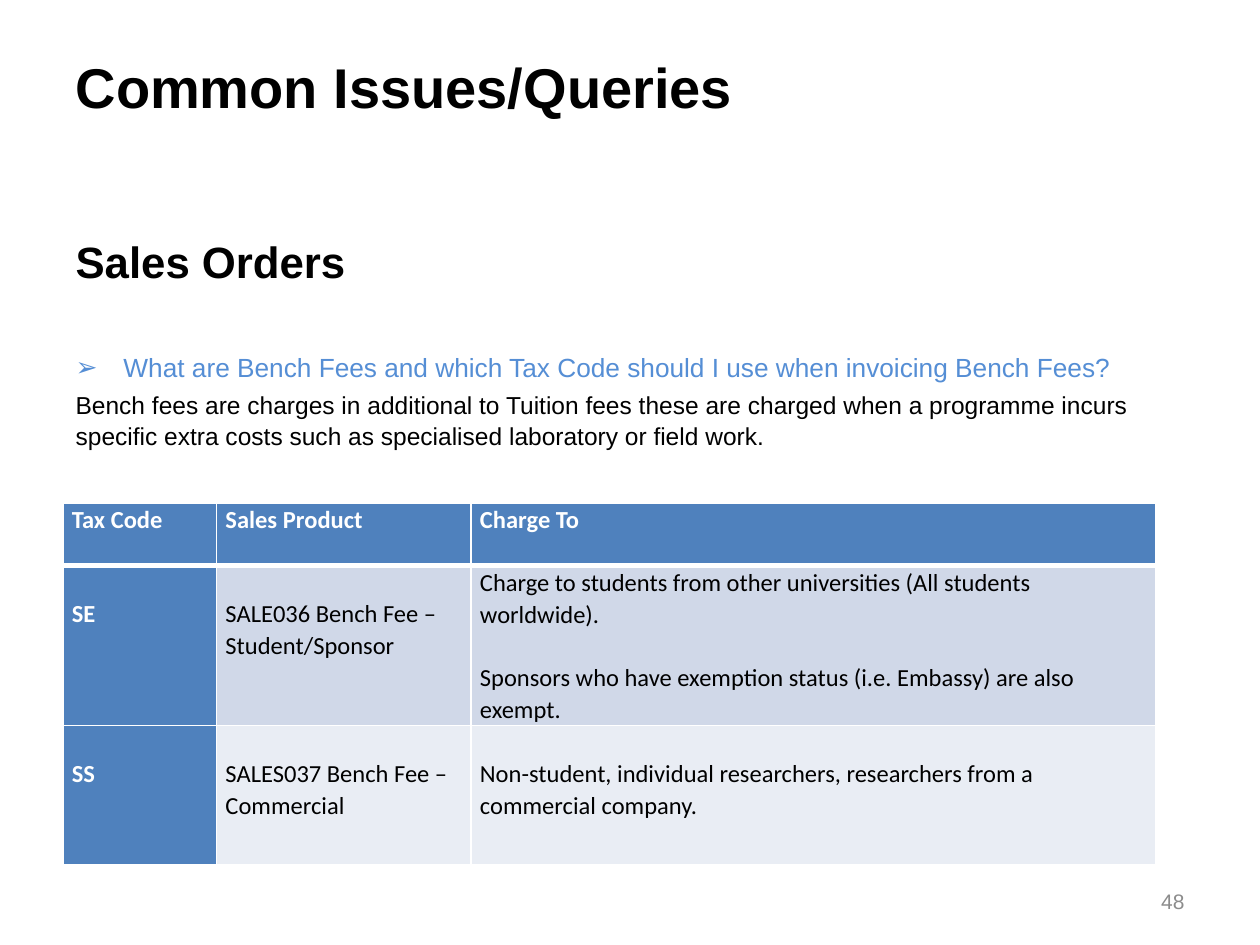
"""Build the slide on bench fees and their tax codes."""
from dataclasses import dataclass

from lxml.etree import SubElement
from pptx import Presentation
from pptx.dml.color import RGBColor
from pptx.enum.text import MSO_ANCHOR as Anchor, MSO_AUTO_SIZE as AutoSize, PP_ALIGN as Align
from pptx.oxml import parse_xml
from pptx.oxml.ns import nsdecls, qn
from pptx.util import Inches, Pt


@dataclass(frozen=True)
class Theme:
    black: str = "000000"
    white: str = "FFFFFF"
    question: str = "558ED5"
    number: str = "8C8C8C"
    header: str = "4F81BD"
    bands: tuple = ("D0D8E8", "E9EDF4")
    heading_font: str = "Arial"
    table_font: str = "Calibri"
    title_size: int = 32
    subtitle_size: int = 25
    question_size: int = 15
    text_size: int = 14
    number_size: int = 12


theme = Theme()


def write(paragraph, text, size=theme.text_size, color=theme.black, font=theme.heading_font,
          bold=False, align=Align.LEFT, before=0, spacing=1.0, bullet=None):
    properties = paragraph._p.get_or_add_pPr()
    indent = Inches(0.38) if bullet else 0
    properties.set("marL", str(indent))
    properties.set("indent", str(-indent))
    paragraph.alignment = align
    paragraph.space_before = Pt(before)
    paragraph.line_spacing = spacing
    if bullet:
        SubElement(properties, qn("a:buFont")).set("typeface", font)
        SubElement(properties, qn("a:buChar")).set("char", bullet)
    else:
        SubElement(properties, qn("a:buNone"))
    run = paragraph.add_run()
    run.text = text
    run.font.size = Pt(size)
    run.font.name = font
    run.font.bold = bold
    run.font.color.rgb = RGBColor.from_string(color)


def place(shape, left, top, width, height, anchor):
    shape.left, shape.width = (int(share * slide_width) for share in (left, width))
    shape.top, shape.height = (int(share * slide_height) for share in (top, height))
    shape.text_frame.word_wrap = True
    shape.text_frame.auto_size = AutoSize.NONE
    shape.text_frame.vertical_anchor = anchor
    return shape.text_frame


presentation = Presentation()
presentation.slide_width, presentation.slide_height = Inches(10), Inches(7.5)
slide_width, slide_height = presentation.slide_width, presentation.slide_height
slide = presentation.slides.add_slide(presentation.slide_layouts[1])
left_margin = 0.05

title = place(slide.shapes.title, left_margin, 0.13 / 7.5, 0.9, 0.87 / 7.5, Anchor.BOTTOM)
write(title.paragraphs[0], "Common Issues/Queries", size=theme.title_size, bold=True,
      align=Align.JUSTIFY)

body = place(slide.placeholders[1], left_margin, 1.78 / 7.5, 0.92, 5.04 / 7.5, Anchor.TOP)
body.margin_top = Inches(0.08)
write(body.paragraphs[0], "Sales Orders", size=theme.subtitle_size, bold=True)
write(body.add_paragraph(),
      "What are Bench Fees and which Tax Code should I use when invoicing Bench Fees?",
      size=theme.question_size, color=theme.question, before=37, bullet="➢")
write(body.add_paragraph(),
      "Bench fees are charges in additional to Tuition fees these are charged when a programme "
      "incurs specific extra costs such as specialised laboratory or field work.",
      before=3, spacing=1.06)

number = place(slide.shapes.add_textbox(0, 0, 0, 0), 0.72, 6.95 / 7.5, 0.23, 0.4 / 7.5,
               Anchor.MIDDLE)
write(number.paragraphs[0], "48", size=theme.number_size, color=theme.number, align=Align.RIGHT)

rows = [
    [["Tax Code"], ["Sales Product"], ["Charge To"]],
    [["SE"], ["SALE036 Bench Fee – Student/Sponsor"],
     ["Charge to students from other universities (All students worldwide).",
      "Sponsors who have exemption status (i.e. Embassy) are also exempt."]],
    [["SS"], ["SALES037 Bench Fee – Commercial"],
     ["Non-student, individual researchers, researchers from a commercial company."]],
]
column_widths = [Inches(width) for width in (1.22, 2.02, 5.43)]
row_heights = [Inches(height) for height in (0.5, 1.27, 1.1)]
blank_line = 18
table = slide.shapes.add_table(len(rows), len(column_widths), Inches(0.5), Inches(3.99),
                               sum(column_widths), sum(row_heights)).table
for column, width in zip(table.columns, column_widths):
    column.width = width
for row, height in zip(table.rows, row_heights):
    row.height = height

for row_index, row in enumerate(rows):
    for column_index, texts in enumerate(row):
        cell = table.cell(row_index, column_index)
        is_header = row_index == 0 or column_index == 0
        fill = theme.header if is_header else theme.bands[row_index - 1]
        cell.fill.solid()
        cell.fill.fore_color.rgb = RGBColor.from_string(fill)
        cell.margin_left = cell.margin_right = Inches(0.07)
        cell.margin_top = Pt(blank_line if row_index and len(texts) == 1 else 0)
        cell.margin_bottom = 0
        cell.vertical_anchor = Anchor.TOP
        for index, text in enumerate(texts):
            frame = cell.text_frame
            paragraph = frame.add_paragraph() if index else frame.paragraphs[0]
            write(paragraph, text, font=theme.table_font, bold=is_header, spacing=1.07,
                  color=theme.white if is_header else theme.black,
                  before=blank_line if index else 0)
        widths = {"lnL": 1, "lnR": 1, "lnT": 3 if row_index == 1 else 1,
                  "lnB": 3 if row_index == 0 else 1}
        for position, (side, points) in enumerate(widths.items()):
            cell._tc.get_or_add_tcPr().insert(position, parse_xml(
                f'<a:{side} {nsdecls("a")} w="{Pt(points)}"><a:solidFill>'
                f'<a:srgbClr val="{theme.white}"/></a:solidFill></a:{side}>'))

presentation.save("out.pptx")
